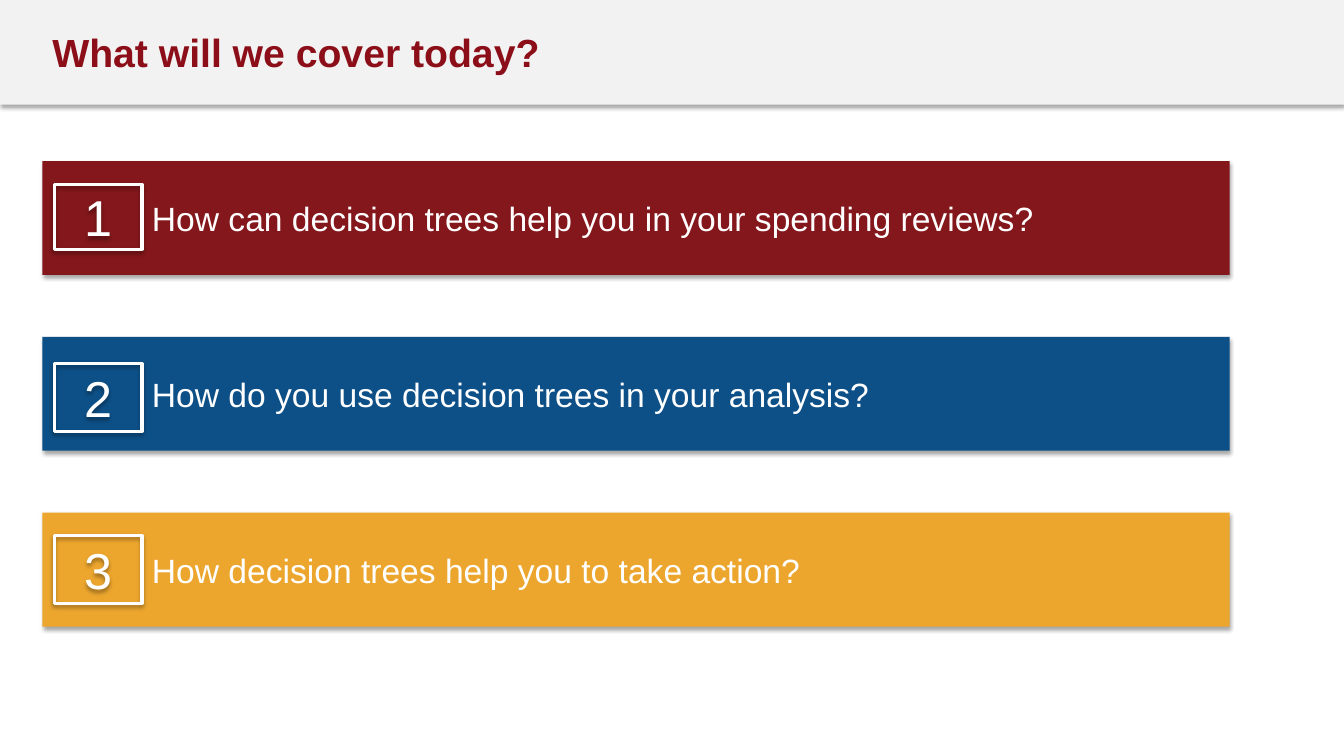
from dataclasses import dataclass

from lxml import etree
from pptx import Presentation
from pptx.dml.color import RGBColor
from pptx.enum.shapes import MSO_SHAPE
from pptx.enum.text import MSO_ANCHOR, PP_ALIGN
from pptx.oxml.ns import qn
from pptx.shapes.autoshape import Shape
from pptx.shapes.shapetree import GroupShapes, SlideShapes
from pptx.util import Cm, Pt

RECTANGLE = MSO_SHAPE.RECTANGLE
MIDDLE, TOP = MSO_ANCHOR.MIDDLE, MSO_ANCHOR.TOP
LEFT, CENTER = PP_ALIGN.LEFT, PP_ALIGN.CENTER

FONT = "Arial"
WHITE = "FFFFFF"
SLIDE_WIDTH, SLIDE_HEIGHT = 33.87, 19.05
MARGIN = 1.07
FIRST_BAR_TOP, BAR_PITCH = 4.06, 4.43
BAR_WIDTH, BAR_HEIGHT = 29.92, 2.87
NUMBER_LEFT, NUMBER_WIDTH = 1.37, 2.21
QUESTION_OFFSET, QUESTION_WIDTH, QUESTION_HEIGHT = 0.8, 25.6, 1.27


@dataclass(frozen=True)
class Box:
    left: float
    top: float
    width: float
    height: float

    def lengths(self) -> tuple[Cm, Cm, Cm, Cm]:
        return Cm(self.left), Cm(self.top), Cm(self.width), Cm(self.height)


@dataclass(frozen=True)
class Topic:
    question: str
    color: str
    number_offset: float
    number_height: float


TOPICS = [
    Topic("How can decision trees help you in your spending reviews?", "83171B", 0.59, 1.63),
    Topic("How do you use decision trees in your analysis?", "0D5087", 0.68, 1.7),
    Topic("How decision trees help you to take action?", "ECA62E", 0.58, 1.7),
]


def rgb(color: str) -> RGBColor:
    return RGBColor.from_string(color)


def add_shadow(shape: Shape) -> None:
    shape.shadow.inherit = False
    effects = shape.element.spPr.find(qn("a:effectLst"))
    shadow = etree.SubElement(
        effects, qn("a:outerShdw"),
        blurRad=str(Pt(3.1)), dist=str(Pt(1.8)), dir="5400000", rotWithShape="0",
    )
    black = etree.SubElement(shadow, qn("a:srgbClr"), val="000000")
    etree.SubElement(black, qn("a:alpha"), val="35000")


def add_band(shapes: SlideShapes | GroupShapes, box: Box, color: str) -> None:
    band = shapes.add_shape(RECTANGLE, *box.lengths())
    band.fill.solid()
    band.fill.fore_color.rgb = rgb(color)
    band.line.fill.background()
    add_shadow(band)


def write(shape: Shape, text: str, size: float, color: str, bold: bool = False,
          anchor: MSO_ANCHOR = MIDDLE, align: PP_ALIGN = LEFT) -> None:
    frame = shape.text_frame
    frame.word_wrap = True
    frame.vertical_anchor = anchor
    paragraph = frame.paragraphs[0]
    paragraph.alignment = align
    run = paragraph.add_run()
    run.text = text
    run.font.name = FONT
    run.font.size = Pt(size)
    run.font.bold = bold
    run.font.color.rgb = rgb(color)


def add_number(shapes: GroupShapes, box: Box, number: int) -> None:
    frame = shapes.add_shape(RECTANGLE, *box.lengths())
    frame.fill.background()
    frame.line.color.rgb = rgb(WHITE)
    frame.line.width = Pt(2.25)
    add_shadow(frame)
    write(frame, str(number), 36, WHITE, align=CENTER)


def add_topic(shapes: SlideShapes, number: int, topic: Topic) -> None:
    top = FIRST_BAR_TOP + (number - 1) * BAR_PITCH
    members = shapes.add_group_shape().shapes
    add_band(members, Box(MARGIN, top, BAR_WIDTH, BAR_HEIGHT), topic.color)
    add_number(members, Box(NUMBER_LEFT, top + topic.number_offset,
                            NUMBER_WIDTH, topic.number_height), number)
    question_box = Box(NUMBER_LEFT + NUMBER_WIDTH, top + QUESTION_OFFSET,
                       QUESTION_WIDTH, QUESTION_HEIGHT)
    question = members.add_textbox(*question_box.lengths())
    write(question, topic.question, 24, WHITE, anchor=TOP)


def main() -> None:
    presentation = Presentation()
    presentation.slide_width = Cm(SLIDE_WIDTH)
    presentation.slide_height = Cm(SLIDE_HEIGHT)
    slide = presentation.slides.add_slide(presentation.slide_layouts[6])
    add_band(slide.shapes, Box(0, 0, SLIDE_WIDTH, 2.64), "F2F2F2")
    title = slide.shapes.add_textbox(*Box(MARGIN, 0.33, 28.73, 1.96).lengths())
    write(title, "What will we cover today?", 28, "8B0E18", bold=True)
    for number, topic in enumerate(TOPICS, start=1):
        add_topic(slide.shapes, number, topic)
    presentation.save("out.pptx")


if __name__ == "__main__":
    main()
